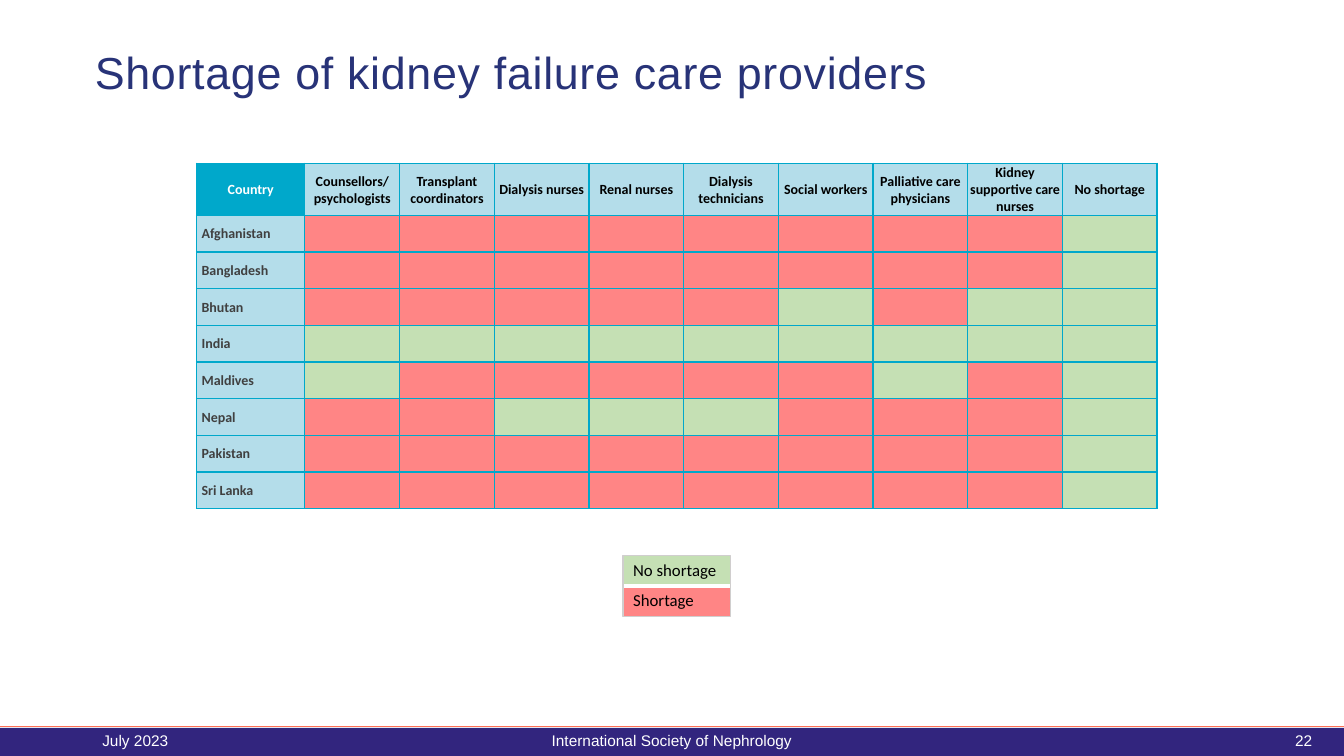
from pptx import Presentation
from pptx.dml.color import RGBColor
from pptx.enum.shapes import MSO_CONNECTOR, MSO_SHAPE
from pptx.enum.text import MSO_ANCHOR, MSO_AUTO_SIZE, PP_ALIGN
from pptx.oxml.ns import qn
from pptx.util import Pt
from lxml import etree

LEFT, CENTER, RIGHT = PP_ALIGN.LEFT, PP_ALIGN.CENTER, PP_ALIGN.RIGHT
MIDDLE = MSO_ANCHOR.MIDDLE
RECTANGLE, STRAIGHT = MSO_SHAPE.RECTANGLE, MSO_CONNECTOR.STRAIGHT

WIDTH, HEIGHT = 960, 540
NAVY, PURPLE, CORAL = "283378", "32257E", "FE7055"
TEAL, PALE_BLUE = "00A8CB", "B4DDEA"
RED, GREEN = "FF8585", "C5E0B4"
WHITE, BLACK, DARK_GREY, LIGHT_GREY = "FFFFFF", "000000", "404040", "D0CECE"

PROVIDERS = [
    "Counsellors/ psychologists", "Transplant coordinators", "Dialysis nurses",
    "Renal nurses", "Dialysis technicians", "Social workers",
    "Palliative care physicians", "Kidney supportive care nurses", "No shortage",
]
SHORTAGES = {
    "Afghanistan": "SSSSSSSS-",
    "Bangladesh": "SSSSSSSS-",
    "Bhutan": "SSSSS-S--",
    "India": "---------",
    "Maldives": "-SSSSS-S-",
    "Nepal": "SS---SSS-",
    "Pakistan": "SSSSSSSS-",
    "Sri Lanka": "SSSSSSSS-",
}


def rgb(value):
    return RGBColor.from_string(value)


def write(frame, text, size, color, align=LEFT, font="Arial", bold=False, spacing=None):
    frame.text = text
    paragraph = frame.paragraphs[0]
    paragraph.alignment = align
    if spacing:
        paragraph.line_spacing = spacing
    paragraph.font.name = font
    paragraph.font.size = Pt(size)
    paragraph.font.bold = bold
    paragraph.font.color.rgb = rgb(color)


def set_borders(cell, color, widths):
    properties = cell._tc.get_or_add_tcPr()
    for index, (side, width) in enumerate(zip(("lnL", "lnR", "lnT", "lnB"), widths)):
        border = etree.Element(qn(f"a:{side}"), w=str(Pt(width)))
        fill = etree.SubElement(border, qn("a:solidFill"))
        etree.SubElement(fill, qn("a:srgbClr"), val=color)
        properties.insert(index, border)


def style_cell(cell, fill, border, widths, margins):
    cell.fill.solid()
    cell.fill.fore_color.rgb = rgb(fill)
    set_borders(cell, border, widths)
    cell.margin_left, cell.margin_top, cell.margin_right, cell.margin_bottom = map(Pt, margins)


def add_grid(slide, left, top, column_widths, row_heights):
    table = slide.shapes.add_table(
        len(row_heights), len(column_widths), Pt(left), Pt(top),
        Pt(sum(column_widths)), Pt(sum(row_heights))).table
    table.first_row = table.horz_banding = False
    for column, width in zip(table.columns, column_widths):
        column.width = Pt(width)
    for row, height in zip(table.rows, row_heights):
        row.height = Pt(height)
    return table


def add_shortage_table(slide):
    table = add_grid(slide, 140.4, 116.6, [77.4] + [67.65] * len(PROVIDERS),
                     [37.2] + [26.2] * len(SHORTAGES))

    def fill_cell(row, column, fill, margins, *text, **style):
        cell = table.cell(row, column)
        style_cell(cell, fill, TEAL, (1, 1, 1, 1), margins)
        cell.vertical_anchor = MIDDLE
        if text:
            write(cell.text_frame, text[0], 10, font="Calibri", bold=True, **style)

    label_margins, header_margins = (3.6, 0, 3.6, 0), (0.72, 0.72, 0.72, 0)
    fill_cell(0, 0, TEAL, label_margins, "Country", color=WHITE, align=CENTER, spacing=1.07)
    for column, provider in enumerate(PROVIDERS, 1):
        fill_cell(0, column, PALE_BLUE, header_margins, provider, color=BLACK, align=CENTER)
    for row, (country, marks) in enumerate(SHORTAGES.items(), 1):
        fill_cell(row, 0, PALE_BLUE, label_margins, country, color=DARK_GREY, spacing=1.07)
        for column, mark in enumerate(marks, 1):
            fill_cell(row, column, RED if mark == "S" else GREEN, (0, 0, 0, 0))


def add_legend(slide):
    left, top, width, row_height = 445, 396.7, 77, 21.8
    legend = add_grid(slide, left, top, [width], [row_height] * 2)
    entries = [("No shortage", GREEN, (1, 1, 1, 3)), ("Shortage", RED, (1, 1, 3, 1))]
    for row, (label, fill, widths) in enumerate(entries):
        cell = legend.cell(row, 0)
        style_cell(cell, fill, WHITE, widths, (7.2, 3.6, 7.2, 3.6))
        write(cell.text_frame, label, 12, BLACK, font="Calibri")
    frame = add_rectangle(slide, left, top, width, 2 * row_height)
    frame.fill.background()
    frame.line.color.rgb = rgb(LIGHT_GREY)
    frame.line.width = Pt(1)


def add_rectangle(slide, left, top, width, height):
    rectangle = slide.shapes.add_shape(RECTANGLE, Pt(left), Pt(top), Pt(width), Pt(height))
    rectangle.shadow.inherit = False
    return rectangle


def add_footer_text(slide, left, width, text, align):
    box = slide.shapes.add_textbox(Pt(left), Pt(514.8), Pt(width), Pt(28.8))
    box.text_frame.word_wrap = True
    box.text_frame.vertical_anchor = MIDDLE
    write(box.text_frame, text, 11, WHITE, align)


def add_footer(slide):
    bar = add_rectangle(slide, 0, 520, WIDTH, 20)
    bar.fill.solid()
    bar.fill.fore_color.rgb = rgb(PURPLE)
    bar.line.fill.background()
    rule = slide.shapes.add_connector(STRAIGHT, Pt(0), Pt(519), Pt(WIDTH), Pt(519))
    rule.line.color.rgb = rgb(CORAL)
    rule.line.width = Pt(0.75)
    etree.SubElement(rule._element.spPr, qn("a:effectLst"))
    add_footer_text(slide, 66, 216, "July 2023", LEFT)
    add_footer_text(slide, 318, 324, "International Society of Nephrology", CENTER)
    add_footer_text(slide, 678, 266.4, "22", RIGHT)


def set_title(slide):
    title = slide.shapes.title
    title.left, title.top, title.width, title.height = Pt(60.5), Pt(28), Pt(667), Pt(51)
    frame = title.text_frame
    frame.auto_size = MSO_AUTO_SIZE.NONE
    frame.vertical_anchor = MIDDLE
    write(frame, "Shortage of kidney failure care providers", 32, NAVY, spacing=0.9)
    frame.paragraphs[0].runs[0]._r.get_or_add_rPr().set("spc", "50")


def main():
    presentation = Presentation()
    presentation.slide_width, presentation.slide_height = Pt(WIDTH), Pt(HEIGHT)
    slide = presentation.slides.add_slide(presentation.slide_layouts[5])
    set_title(slide)
    add_shortage_table(slide)
    add_legend(slide)
    add_footer(slide)
    presentation.save("out.pptx")


if __name__ == "__main__":
    main()
